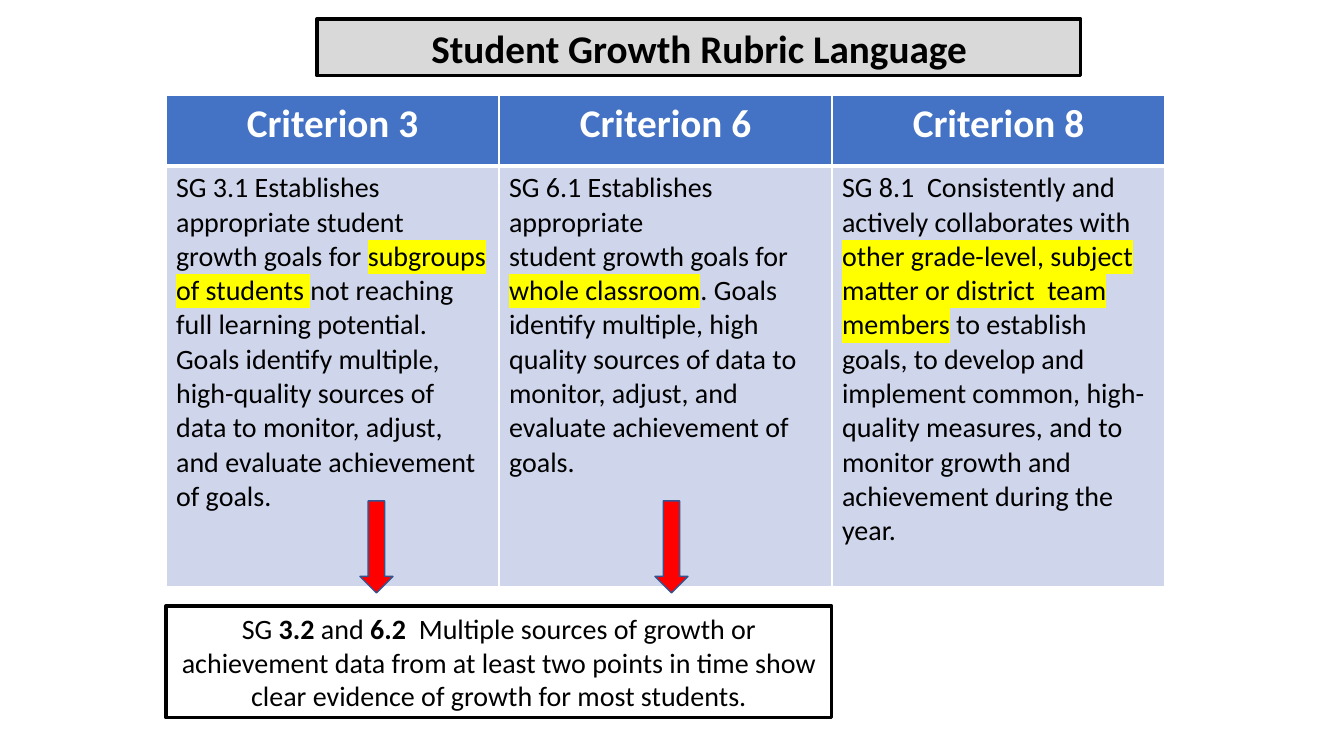
from lxml.etree import SubElement
from pptx import Presentation
from pptx.dml.color import RGBColor
from pptx.enum.shapes import MSO_SHAPE
from pptx.enum.text import MSO_ANCHOR, PP_ALIGN
from pptx.oxml import parse_xml
from pptx.oxml.ns import nsdecls, qn
from pptx.util import Emu, Pt

BLACK = RGBColor(0x00, 0x00, 0x00)
WHITE = RGBColor(0xFF, 0xFF, 0xFF)
GREY = RGBColor(0xD9, 0xD9, 0xD9)
BLUE = RGBColor(0x44, 0x72, 0xC4)
PALE_BLUE = RGBColor(0xCF, 0xD5, 0xEA)
NAVY = RGBColor(0x32, 0x54, 0x91)
RED = RGBColor(0xFF, 0x00, 0x00)
YELLOW = RGBColor(0xFF, 0xFF, 0x00)

CRITERIA = {
    "Criterion 3": [
        "SG 3.1 Establishes appropriate student growth goals for |subgroups of students |"
        "not reaching full learning potential. Goals identify multiple, high-quality "
        "sources of data to monitor, adjust, and evaluate achievement of goals."],
    "Criterion 6": [
        "SG 6.1 Establishes appropriate",
        "student growth goals for",
        "|whole classroom|. Goals",
        "identify multiple, high quality sources of data to monitor, adjust, and",
        "evaluate achievement of",
        "goals."],
    "Criterion 8": [
        "SG 8.1  Consistently and actively collaborates with |other grade-level, subject "
        "matter or district  team members| to establish goals, to develop and implement "
        "common, high-quality measures, and to monitor growth and achievement during "
        "the year."],
}
EVIDENCE = ("SG |3.2| and |6.2|  Multiple sources of growth or achievement data from at "
            "least two points in time show clear evidence of growth for most students.")


def px(n):
    return Emu(round(n * 914400 / 100.8))


class Slide:
    """Slide under construction, with its font and element styles."""

    font = "Calibri"

    def __init__(self, prs):
        self.s = prs.slides.add_slide(prs.slide_layouts[6])

    def highlight(self, r):
        mark = parse_xml(f'<a:highlight {nsdecls("a")}><a:srgbClr val="{YELLOW}"/></a:highlight>')
        r._r.get_or_add_rPr().find(qn("a:solidFill")).addnext(mark)

    def add_text(self, tf, paragraphs, size, color, bold=False, align=None, marked=False):
        """Fill a text frame; parts between bars are highlighted or bold."""
        tf.word_wrap = True
        for i, text in enumerate(paragraphs):
            p = tf.paragraphs[0] if i == 0 else tf.add_paragraph()
            p.alignment = align
            for j, part in enumerate(text.split("|")):
                if not part:
                    continue
                r = p.add_run()
                r.text = part
                strong = j % 2 == 1
                r.font.size = Pt(size)
                r.font.name = self.font
                r.font.bold = bold or (strong and not marked)
                r.font.color.rgb = color
                if strong and marked:
                    self.highlight(r)

    def shape(self, kind, x, y, w, h, fill, line, width):
        sp = self.s.shapes.add_shape(kind, px(x), px(y), px(w), px(h))
        sp.shadow.inherit = False
        sp.fill.solid()
        sp.fill.fore_color.rgb = fill
        sp.line.color.rgb = line
        sp.line.width = Pt(width)
        return sp

    def box(self, x, y, w, h, text, size, fill, bold=False):
        sp = self.shape(MSO_SHAPE.RECTANGLE, x, y, w, h, fill, BLACK, 2.25)
        sp.text_frame.vertical_anchor = MSO_ANCHOR.MIDDLE
        self.add_text(sp.text_frame, [text], size, BLACK, bold, PP_ALIGN.CENTER)

    def arrow(self, x, y, w, h):
        self.shape(MSO_SHAPE.DOWN_ARROW, x, y, w, h, RED, NAVY, 1)

    def cell(self, cell, fill, borders):
        tc_pr = cell._tc.get_or_add_tcPr()
        for side, width in borders.items():
            ln = SubElement(tc_pr, qn(f"a:ln{side}"), w=str(Pt(width)))
            SubElement(SubElement(ln, qn("a:solidFill")), qn("a:srgbClr"), val=str(WHITE))
        cell.fill.solid()
        cell.fill.fore_color.rgb = fill

    def table(self, x, y, col_width, heights, columns):
        frame = self.s.shapes.add_table(len(heights), len(columns), px(x), px(y),
                                        px(col_width * len(columns)), px(sum(heights)))
        table = frame.table
        for row, height in zip(table.rows, heights):
            row.height = px(height)
        for i, (heading, body) in enumerate(columns.items()):
            table.columns[i].width = px(col_width)
            head, detail = table.cell(0, i), table.cell(1, i)
            self.cell(head, BLUE, {"L": 1, "R": 1, "T": 1, "B": 3})
            self.cell(detail, PALE_BLUE, {"L": 1, "R": 1, "T": 3, "B": 1})
            self.add_text(head.text_frame, [heading], 28, WHITE, True, PP_ALIGN.CENTER)
            self.add_text(detail.text_frame, body, 20, BLACK, marked=True)


def main():
    prs = Presentation()
    prs.slide_width, prs.slide_height = px(1344), px(756)
    slide = Slide(prs)
    slide.table(166, 95, 333, [71, 421], CRITERIA)
    slide.box(317, 19, 764, 57, "Student Growth Rubric Language", 28, GREY, bold=True)
    slide.box(166, 606, 666, 112, EVIDENCE, 20, WHITE)
    for x in (360, 655):
        slide.arrow(x, 501, 33, 92)
    prs.save("out.pptx")


if __name__ == "__main__":
    main()
